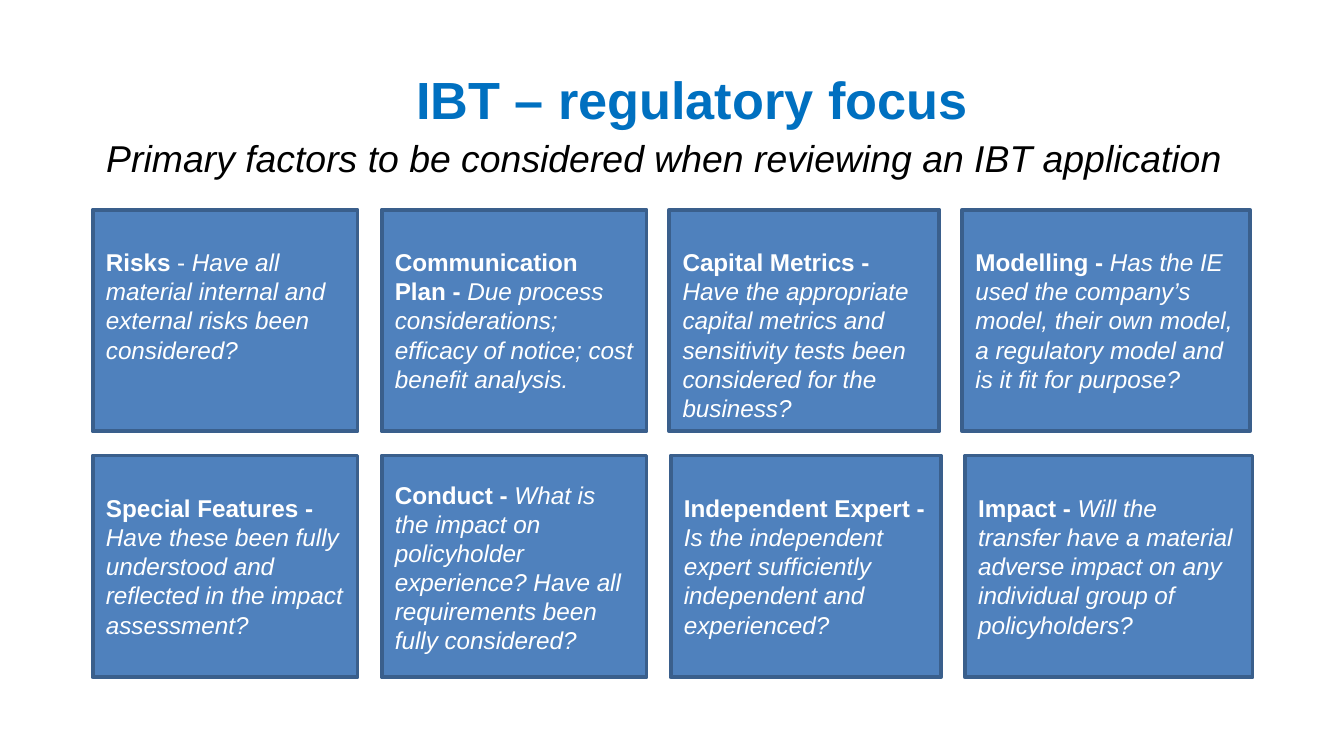
from pptx import Presentation
from pptx.dml.color import RGBColor
from pptx.enum.shapes import MSO_SHAPE as Shape
from pptx.enum.text import MSO_ANCHOR as Anchor, PP_ALIGN as Align
from pptx.util import Inches, Pt

THEME = {
    "font": "Arial",
    "heading": {"size": Pt(28), "color": RGBColor.from_string("0070C0")},
    "subtitle": {"size": Pt(20), "color": RGBColor.from_string("000000")},
    "card": {"size": Pt(13), "color": RGBColor.from_string("FFFFFF")},
    "fill": RGBColor.from_string("4F81BD"),
    "line": RGBColor.from_string("3A5F8C"),
}

# Grid, in inches; the two rows have slightly different columns
LEFT, TOP, ROW_HEIGHT, ROW_GAP = 0.69, 1.56, 1.65, 0.18
COLUMN_LEFTS = [[LEFT, 2.84, 4.98, 7.16], [LEFT, 2.84, 4.99, 7.18]]
COLUMN_WIDTHS = [1.97, 1.97, 2.01, 2.14]
TEXT_TOP, LONG_TEXT_TOP = 0.28, 0.18

# Each card is a list of (text, bold, italic) runs
CARD_ROWS = [
    [
        [("Risks", True, False), (" - ", False, False),
         ("Have all material internal and external risks been considered?", False, True)],
        [("Communication Plan - ", True, False),
         ("Due process considerations; efficacy of notice; cost benefit analysis.", False, True)],
        [("Capital Metrics - ", True, False),
         ("Have the appropriate capital metrics and sensitivity tests been "
          "considered for the business?", False, True)],
        [("Modelling - ", True, False),
         ("Has the IE used the company’s model, their own model, a regulatory "
          "model and is it fit for purpose?", False, True)],
    ],
    [
        [("Special Features - ", True, False),
         ("Have these been fully understood and reflected in the impact assessment?", False, True)],
        [("Conduct - ", True, False),
         ("What is the impact on policyholder experience? Have all requirements "
          "been fully considered?", False, True)],
        [("Independent Expert - ", True, False),
         ("Is the independent expert sufficiently independent and experienced?", False, True)],
        [("Impact - ", True, False),
         ("Will the transfer have a material adverse impact on any individual "
          "group of policyholders?", False, True)],
    ],
]


def place(shape, left, top, width, height):
    box = {"left": left, "top": top, "width": width, "height": height}
    for name, value in box.items():
        setattr(shape, name, Inches(value))


def write_runs(shape, runs, style, **frame_format):
    """Fill the shape with one left-aligned paragraph of styled runs."""
    frame = shape.text_frame
    for name, value in {"word_wrap": True, **frame_format}.items():
        setattr(frame, name, value)
    paragraph = frame.paragraphs[0]
    paragraph.alignment = Align.LEFT
    for text, bold, italic in runs:
        run = paragraph.add_run()
        run.text = text
        font_format = {"name": THEME["font"], "size": style["size"],
                       "bold": bold, "italic": italic}
        for name, value in font_format.items():
            setattr(run.font, name, value)
        run.font.color.rgb = style["color"]


presentation = Presentation()
presentation.slide_width = Inches(10)
presentation.slide_height = presentation.slide_width * 9 // 16
slide = presentation.slides.add_slide(presentation.slide_layouts.get_by_name("Title Only"))

subtitle = slide.shapes.title
place(subtitle, LEFT, 0.92, 9, 0.5)
write_runs(subtitle,
           [("Primary factors to be considered when reviewing an IBT application", False, True)],
           THEME["subtitle"], vertical_anchor=Anchor.MIDDLE)

for row, (cards, lefts) in enumerate(zip(CARD_ROWS, COLUMN_LEFTS)):
    top = TOP + row * (ROW_HEIGHT + ROW_GAP)
    for runs, left, width in zip(cards, lefts, COLUMN_WIDTHS):
        card = slide.shapes.add_shape(Shape.RECTANGLE, 0, 0, 0, 0)
        place(card, left, top, width, ROW_HEIGHT)
        card.shadow.inherit = False
        card.fill.solid()
        card.fill.fore_color.rgb = THEME["fill"]
        card.line.color.rgb = THEME["line"]
        card.line.width = Pt(2)
        text_top = LONG_TEXT_TOP if runs[0][0].startswith("Conduct") else TEXT_TOP
        write_runs(card, runs, THEME["card"], vertical_anchor=Anchor.TOP,
                   margin_top=Inches(text_top), margin_bottom=Inches(0.05))

heading = slide.shapes.add_textbox(0, 0, 0, 0)
place(heading, 3, 0.45, 4.83, 0.57)
write_runs(heading, [("IBT – regulatory focus", True, False)], THEME["heading"])

presentation.save("out.pptx")
